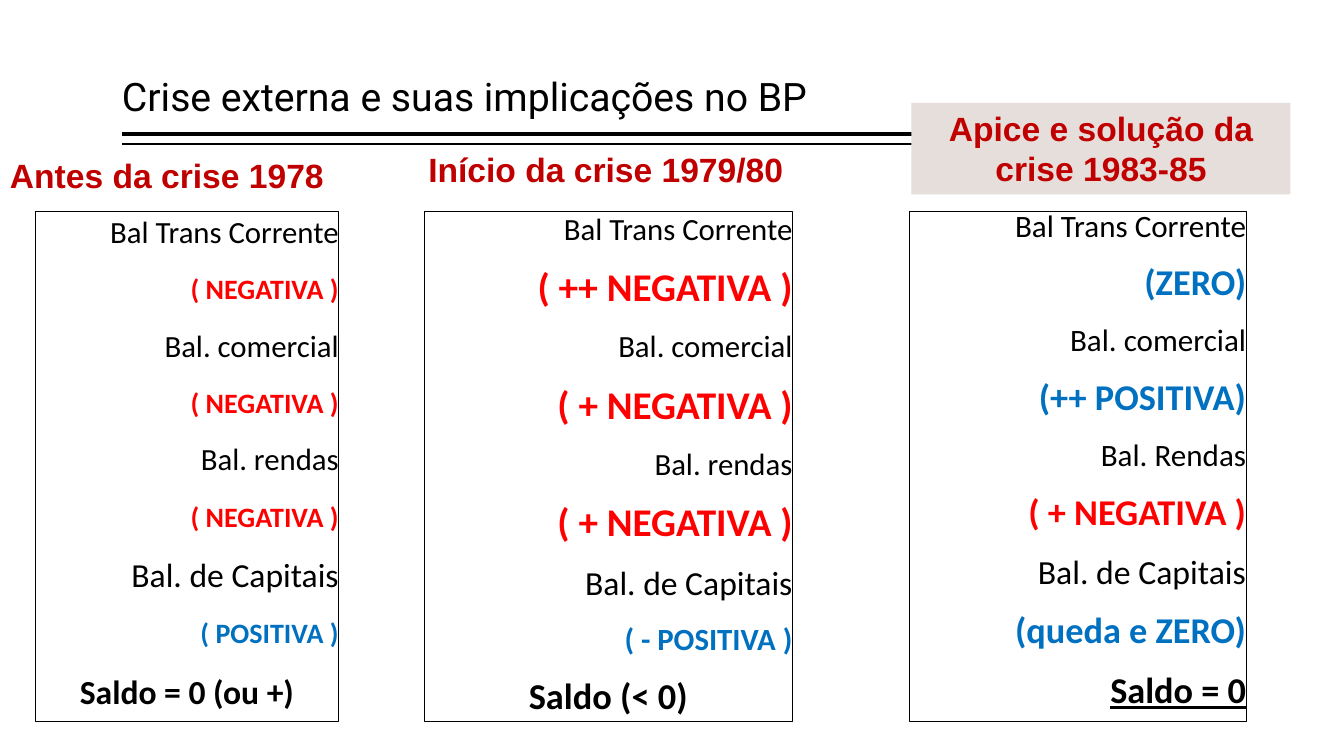
from lxml import etree
from pptx import Presentation
from pptx.dml.color import RGBColor
from pptx.enum import shapes, text
from pptx.oxml.ns import qn
from pptx.util import Inches, Pt

BLACK = RGBColor(0x00, 0x00, 0x00)
RED = RGBColor(0xFF, 0x00, 0x00)
BLUE = RGBColor(0x00, 0x70, 0xC0)
DARK_RED = RGBColor(0xC0, 0x00, 0x00)
BEIGE = RGBColor(0xE5, 0xDE, 0xDB)
LEFT, CENTER, RIGHT = text.PP_ALIGN.LEFT, text.PP_ALIGN.CENTER, text.PP_ALIGN.RIGHT


def write(paragraph, words, size, font="Calibri", color=BLACK, bold=False,
          underline=False, align=LEFT, spacing=1.0, before=0):
    paragraph.alignment = align
    paragraph.line_spacing = spacing
    paragraph.space_before = Pt(before)
    run = paragraph.add_run()
    run.text = words
    run.font.name = font
    run.font.size = Pt(size)
    run.font.color.rgb = color
    run.font.bold = bold
    run.font.underline = underline


def add_rule(slide, top, width):
    rule = slide.shapes.add_connector(
        shapes.MSO_CONNECTOR.STRAIGHT, Inches(12.13), Inches(top), Inches(1.21), Inches(top))
    rule.line.color.rgb = BLACK
    rule.line.width = Pt(width)
    etree.SubElement(rule._element.spPr, qn("a:effectLst"))


def add_rectangle(slide, left, top, width, height, fill=None, line=None):
    shape = slide.shapes.add_shape(
        shapes.MSO_SHAPE.RECTANGLE, Inches(left), Inches(top), Inches(width), Inches(height))
    shape.shadow.inherit = False
    if fill is None:
        shape.fill.background()
    else:
        shape.fill.solid()
        shape.fill.fore_color.rgb = fill
    if line is None:
        shape.line.fill.background()
    else:
        shape.line.color.rgb = line
        shape.line.width = Pt(0.5)
    shape.text_frame.word_wrap = True
    shape.text_frame.vertical_anchor = text.MSO_ANCHOR.TOP
    return shape


def add_text_box(slide, left, top, width, height):
    box = slide.shapes.add_textbox(Inches(left), Inches(top), Inches(width), Inches(height))
    box.text_frame.word_wrap = True
    return box


def add_title(slide, words):
    frame = add_text_box(slide, 1.21, 0.04, 10.91, 1.2).text_frame
    frame.margin_left = frame.margin_right = 0
    frame.vertical_anchor = text.MSO_ANCHOR.BOTTOM
    write(frame.paragraphs[0], words, 28, font="Roboto", spacing=0.9)


def add_heading(shape, words, align=LEFT):
    write(shape.text_frame.paragraphs[0], words, 24, font="Arial", color=DARK_RED,
          bold=True, align=align)


def add_balance(slide, left, width, spacings, accounts, total):
    frame = add_rectangle(slide, left, 2.1, width, 5.06, line=BLACK).text_frame
    frame.margin_left = frame.margin_right = 0
    lines = []
    for name, name_size, result, result_size, color in accounts:
        lines.append((name, name_size, {}))
        lines.append((result, result_size, {"color": color, "bold": True}))
    lines.append(total)
    first_spacing, spacing = spacings
    for index, (words, size, style) in enumerate(lines):
        paragraph = frame.add_paragraph() if index else frame.paragraphs[0]
        write(paragraph, words, size, before=18,
              spacing=spacing if index else first_spacing, **{"align": RIGHT, **style})


def main():
    presentation = Presentation()
    presentation.slide_width = Inches(13.33)
    presentation.slide_height = Inches(7.5)
    slide = presentation.slides.add_slide(presentation.slide_layouts[6])

    add_rule(slide, 1.33, 3)
    add_rule(slide, 1.43, 1)
    add_title(slide, "Crise externa e suas implicações no BP")

    add_balance(slide, 0.35, 3.01, (0.9, 0.9), [
        ("Bal Trans Corrente", 22, "( NEGATIVA )", 20, RED),
        ("Bal. comercial", 22, "( NEGATIVA )", 20, RED),
        ("Bal. rendas", 22, "( NEGATIVA )", 20, RED),
        ("Bal. de Capitais", 24, "( POSITIVA )", 20, BLUE),
    ], ("Saldo = 0 (ou +)", 24, {"bold": True, "align": CENTER}))
    add_balance(slide, 4.21, 3.65, (0.8, 0.8), [
        ("Bal Trans Corrente", 22, "( ++ NEGATIVA )", 28, RED),
        ("Bal. comercial", 22, "( + NEGATIVA )", 28, RED),
        ("Bal. rendas", 22, "( + NEGATIVA )", 28, RED),
        ("Bal. de Capitais", 24, "( - POSITIVA )", 22, BLUE),
    ], ("Saldo (< 0)", 26, {"bold": True, "align": CENTER}))
    add_balance(slide, 9.02, 3.34, (0.7, 0.8), [
        ("Bal Trans Corrente", 22.2, "(ZERO)", 25.9, BLUE),
        ("Bal. comercial", 22.2, "(++ POSITIVA)", 25.9, BLUE),
        ("Bal. Rendas", 22.2, "( + NEGATIVA )", 25.9, RED),
        ("Bal. de Capitais", 24.1, "(queda e ZERO)", 25.9, BLUE),
    ], ("Saldo = 0", 25.9, {"bold": True, "underline": True}))

    add_heading(add_text_box(slide, 0, 1.49, 3.47, 0.51), "Antes da crise 1978")
    add_heading(add_text_box(slide, 4.15, 1.43, 3.77, 0.51), "Início da crise 1979/80")
    add_heading(add_rectangle(slide, 9.04, 1.02, 3.76, 0.91, fill=BEIGE),
                "Apice e solução da crise 1983-85", align=CENTER)

    presentation.save("out.pptx")


if __name__ == "__main__":
    main()
